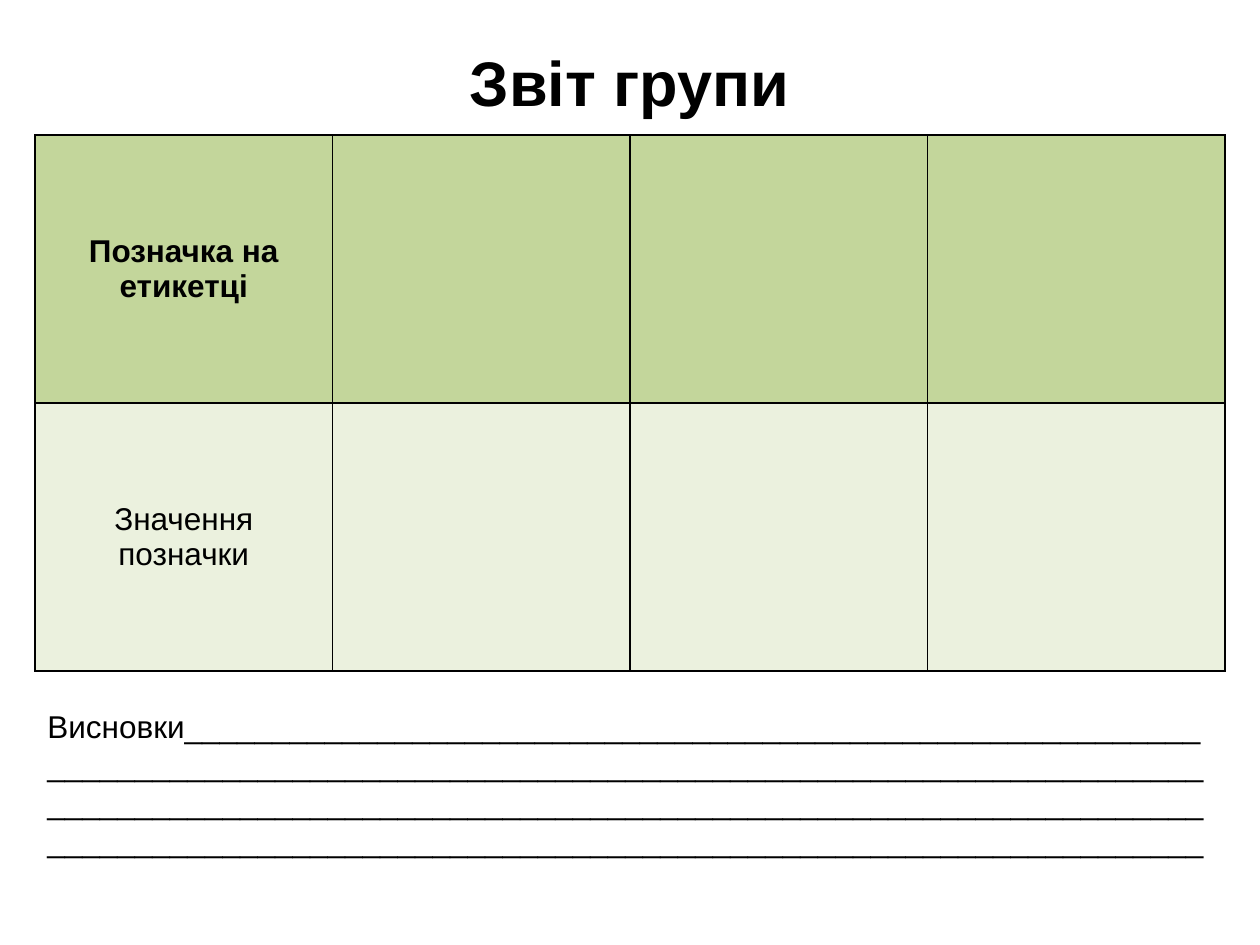
from pptx import Presentation
from pptx.dml.color import RGBColor
from pptx.enum.text import MSO_ANCHOR, MSO_AUTO_SIZE, PP_ALIGN
from pptx.oxml import parse_xml
from pptx.oxml.ns import nsdecls
from pptx.util import Emu, Pt

PX = 914400 // 126
COLORS = {"text": "000000", "header": "C3D69B", "body": "EBF1DE"}
BORDER_WIDTH = 12700


class ReportSlide:
    """Style and elements of the report slide."""

    font_name = "Arial"

    def __init__(self, presentation):
        self.slide = presentation.slides.add_slide(presentation.slide_layouts[5])

    def style(self, paragraph, size, bold=False, align=PP_ALIGN.LEFT):
        paragraph.alignment = align
        font = paragraph.font
        font.name, font.size, font.bold = self.font_name, Pt(size), bold
        font.color.rgb = RGBColor.from_string(COLORS["text"])

    def title(self, text, left, top, width, height):
        shape = self.slide.shapes.title
        shape.left, shape.top, shape.width, shape.height = (
            Emu(value * PX) for value in (left, top, width, height))
        frame = shape.text_frame
        frame.text = text
        frame.word_wrap = False
        frame.vertical_anchor = MSO_ANCHOR.TOP
        self.style(frame.paragraphs[0], 36, True, PP_ALIGN.CENTER)

    def text(self, text, left, top, width, height):
        box = self.slide.shapes.add_textbox(
            *(Emu(value * PX) for value in (left, top, width, height)))
        frame = box.text_frame
        frame.word_wrap = True
        frame.auto_size = MSO_AUTO_SIZE.SHAPE_TO_FIT_TEXT
        frame.text = text
        self.style(frame.paragraphs[0], 18)

    def border(self, cell):
        properties = cell._tc.get_or_add_tcPr()
        for index, side in enumerate(("lnL", "lnR", "lnT", "lnB")):
            properties.insert(index, parse_xml(
                f'<a:{side} {nsdecls("a")} w="{BORDER_WIDTH}"><a:solidFill>'
                f'<a:srgbClr val="{COLORS["text"]}"/></a:solidFill></a:{side}>'))

    def table(self, labels, columns, left, top, width, height):
        table = self.slide.shapes.add_table(
            len(labels), columns,
            *(Emu(value * PX) for value in (left, top, width, height))).table
        for row, label in enumerate(labels):
            fill = COLORS["body" if row else "header"]
            for column in range(columns):
                cell = table.cell(row, column)
                cell.fill.solid()
                cell.fill.fore_color.rgb = RGBColor.from_string(fill)
                cell.vertical_anchor = MSO_ANCHOR.MIDDLE
                self.border(cell)
            first_cell = table.cell(row, 0)
            first_cell.text = label
            self.style(first_cell.text_frame.paragraphs[0], 18, row == 0,
                       PP_ALIGN.CENTER)


def main():
    presentation = Presentation()
    presentation.slide_width = Emu(1260 * PX)
    presentation.slide_height = Emu(945 * PX)
    report = ReportSlide(presentation)

    # Heading
    report.title("Звіт групи", 446, 37, 367, 89)

    # Label table
    report.table(["Позначка на етикетці", "Значення позначки"], 4,
                 35, 135, 1190, 536)

    # Conclusions with ruled lines to write on
    report.text("Висновки" + "_" * 256, 35, 701, 1190, 165)

    presentation.save("out.pptx")


if __name__ == "__main__":
    main()
